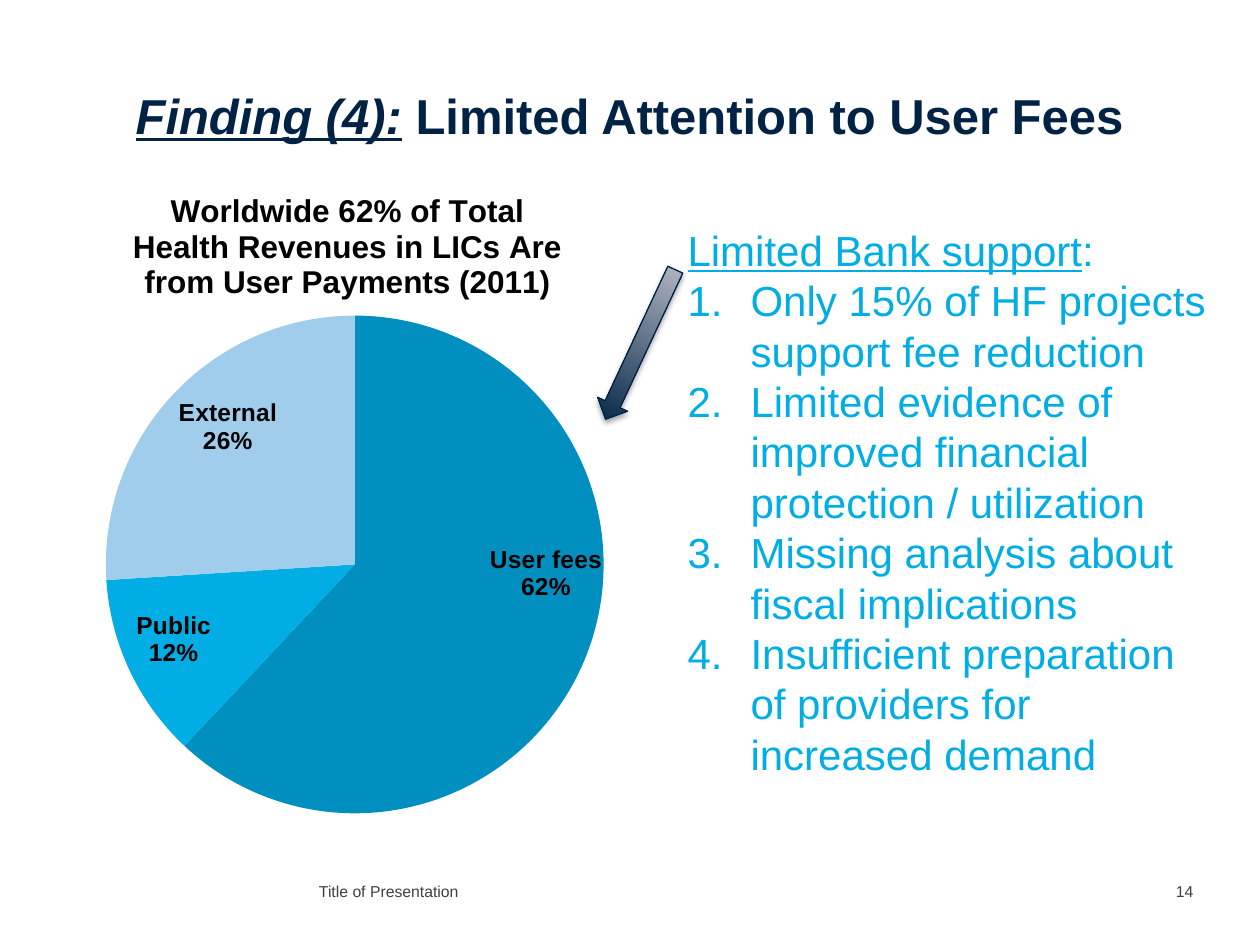
from dataclasses import dataclass

from lxml import etree
from pptx import Presentation
from pptx import util as u
from pptx.chart.data import CategoryChartData
from pptx.dml.color import RGBColor
from pptx.enum import chart as charts, shapes, text
from pptx.oxml import parse_xml
from pptx.oxml.ns import nsdecls, qn


@dataclass(frozen=True)
class Theme:
    face: str = "Arial"
    navy: str = "002345"
    sky: str = "00ADE4"
    edge: str = "002243"
    mist: str = "B8BBC6"
    grey: str = "404040"
    black: str = "000000"
    slices: tuple = ("008FBE", "00ADE4", "A0CDEC")
    head: int = 28
    body: int = 24
    chart: int = 18
    label: int = 14
    foot: int = 9


THEME = Theme()
SCALE = 914400 / 126
SHARES = {"User fees": 62, "Public": 12, "External": 26}
POINTS = (
    "Only 15% of HF projects support fee reduction",
    "Limited evidence of improved financial protection / utilization",
    "Missing analysis about fiscal implications",
    "Insufficient preparation of providers for increased demand",
)


def px(*sizes):
    return [u.Emu(round(size * SCALE)) for size in sizes]


def place(shape, *box):
    shape.left, shape.top, shape.width, shape.height = px(*box)


def inset(frame, *sides):
    (frame.margin_left, frame.margin_top,
     frame.margin_right, frame.margin_bottom) = px(*sides)


def style(font, size, color, bold=None):
    font.name, font.size, font.bold = THEME.face, u.Pt(size), bold
    font.color.rgb = RGBColor.from_string(color)


def lead(par, first, rest):
    """Write a paragraph whose first run is underlined."""
    start, end = par.add_run(), par.add_run()
    start.text, end.text = first, rest
    start.font.underline, end.font.underline = True, False
    return start, end


def add_title(slide):
    title = slide.shapes.title
    place(title, 44, 35, 1171, 112)
    frame = title.text_frame
    inset(frame, 0, 0, 0, 3)
    frame.vertical_anchor = text.MSO_ANCHOR.BOTTOM
    par = frame.paragraphs[0]
    par.alignment = text.PP_ALIGN.CENTER
    start, end = lead(par, "Finding (4):", " Limited Attention to User Fees")
    for run in (start, end):
        style(run.font, THEME.head, THEME.navy, True)
    start.font.italic, end.font.italic = True, False


def mark(par, number):
    """Number a list paragraph, or clear the bullet of a plain one."""
    props = par._p.get_or_add_pPr()
    hang = px(63)[0] if number else 0
    props.set("marL", str(hang))
    props.set("indent", str(-hang))
    if number:
        etree.SubElement(props, qn("a:buFont"), typeface="+mj-lt")
        etree.SubElement(props, qn("a:buAutoNum"), type="arabicPeriod")
    else:
        etree.SubElement(props, qn("a:buNone"))


def add_list(slide):
    body = slide.placeholders[1]
    place(body, 675, 218, 544, 572)
    frame = body.text_frame
    frame.auto_size = text.MSO_AUTO_SIZE.NONE
    lead(frame.paragraphs[0], "Limited Bank support", ":")
    for point in POINTS:
        frame.add_paragraph().text = point
    for number, par in enumerate(frame.paragraphs):
        par.space_before = u.Pt(0)
        par.line_spacing = 1.0
        mark(par, number)
        style(par.font, THEME.body, THEME.sky)
        for run in par.runs:
            style(run.font, THEME.body, THEME.sky)


def add_note(slide, words, *box):
    frame = slide.shapes.add_textbox(*px(*box)).text_frame
    inset(frame, 0, 5, 0, 0)
    frame.word_wrap = True
    frame.text = words
    style(frame.paragraphs[0].runs[0].font, THEME.foot, THEME.grey)


def set_layout(owner, index, **parts):
    """Give a chart part a manual layout, in fractions of the chart."""
    for old in owner.findall(qn("c:layout")):
        owner.remove(old)
    inner = "".join(f'<c:{key} val="{val}"/>' for key, val in parts.items())
    owner.insert(index, parse_xml(
        f'<c:layout {nsdecls("c")}><c:manualLayout>{inner}'
        '</c:manualLayout></c:layout>'))


def show_share(labels):
    """Let labels show the category and its percentage."""
    labels.show_category_name = labels.show_percentage = True
    labels.show_value = False
    labels.number_format, labels.number_format_is_linked = "0%", False
    labels.position = charts.XL_LABEL_POSITION.INSIDE_END
    style(labels.font, THEME.label, THEME.black, True)


def shift_label(point, x, y):
    label = point.data_label
    label.position = charts.XL_LABEL_POSITION.INSIDE_END
    style(label.font, THEME.label, THEME.black, True)
    node = label._dLbl
    for key, val in (("showVal", 0), ("showCatName", 1), ("showPercent", 1)):
        node.find(qn(f"c:{key}")).set("val", str(val))
    set_layout(node, 1, x=x, y=y)


def add_pie(slide):
    data = CategoryChartData()
    data.categories = list(SHARES)
    data.add_series("Series 1", list(SHARES.values()))
    chart = slide.shapes.add_chart(
        charts.XL_CHART_TYPE.PIE, *px(87, 165, 576, 655), data).chart
    style(chart.font, THEME.chart, THEME.black)
    chart.has_legend = False
    chart.has_title = True
    frame = chart.chart_title.text_frame
    frame.text = ("Worldwide 62% of Total Health Revenues in LICs Are "
                  "from User Payments (2011)")
    style(frame.paragraphs[0].runs[0].font, THEME.chart, THEME.black, True)
    set_layout(chart.chart_title._element, 1,
               xMode="edge", yMode="edge", x=0.07, y=0.03)
    set_layout(chart._chartSpace.chart.plotArea, 0, layoutTarget="inner",
               xMode="edge", yMode="edge", x=0.03, y=0.23, w=0.87, h=0.76)
    plot = chart.plots[0]
    plot.vary_by_categories = True
    series = plot.series[0]
    for index, color in enumerate(THEME.slices):
        fill = series.points[index].format.fill
        fill.solid()
        fill.fore_color.rgb = RGBColor.from_string(color)
    show_share(series.data_labels)
    shift_label(series.points[0], 0.04, -0.08)


def add_arrow(slide):
    arrow = slide.shapes.add_shape(
        shapes.MSO_SHAPE.DOWN_ARROW, *px(624, 262, 33, 165))
    arrow.rotation = 25
    arrow.fill.gradient()
    arrow.fill.gradient_angle = 90
    stops = arrow.fill.gradient_stops
    for stop, spot, color in zip(stops, (0, 1), (THEME.navy, THEME.mist)):
        stop.position = spot
        stop.color.rgb = RGBColor.from_string(color)
    arrow.line.color.rgb = RGBColor.from_string(THEME.edge)
    arrow.line.width = u.Pt(0.75)
    arrow.shadow.inherit = False
    glow = arrow._element.spPr.find(qn("a:effectLst"))
    glow.append(parse_xml(
        f'<a:outerShdw {nsdecls("a")} blurRad="{u.Pt(3.1)}" '
        f'dist="{u.Pt(1.8)}" dir="5400000" rotWithShape="0">'
        f'<a:srgbClr val="{THEME.black}"><a:alpha val="35000"/></a:srgbClr>'
        '</a:outerShdw>'))


def main():
    deck = Presentation()
    deck.slide_width, deck.slide_height = px(1260, 945)
    slide = deck.slides.add_slide(deck.slide_layouts[1])
    add_title(slide)
    add_note(slide, "Title of Presentation", 319, 877, 629, 30)
    add_note(slide, "14", 1176, 877, 39, 30)
    add_pie(slide)
    add_list(slide)
    add_arrow(slide)
    deck.save("out.pptx")


if __name__ == "__main__":
    main()
